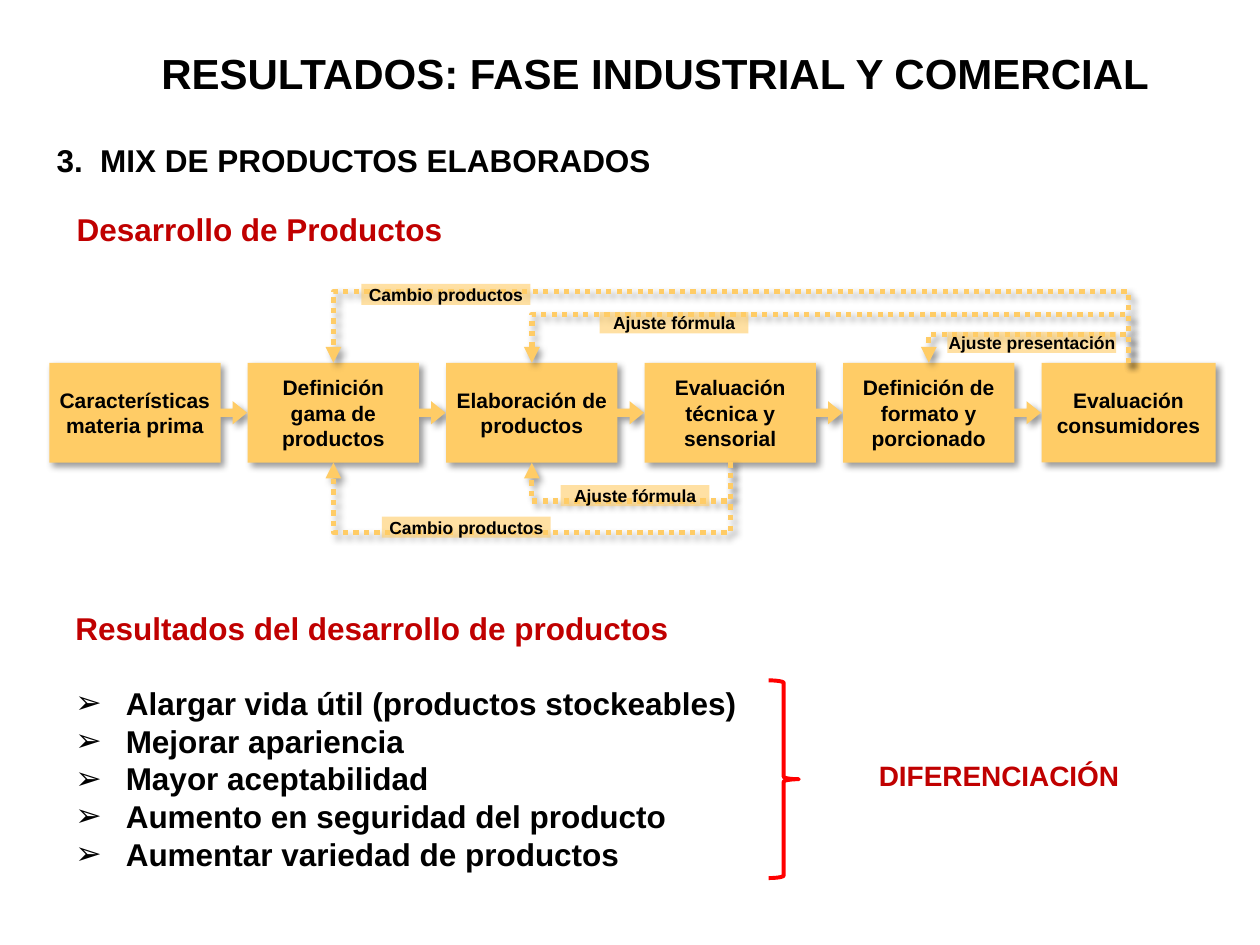
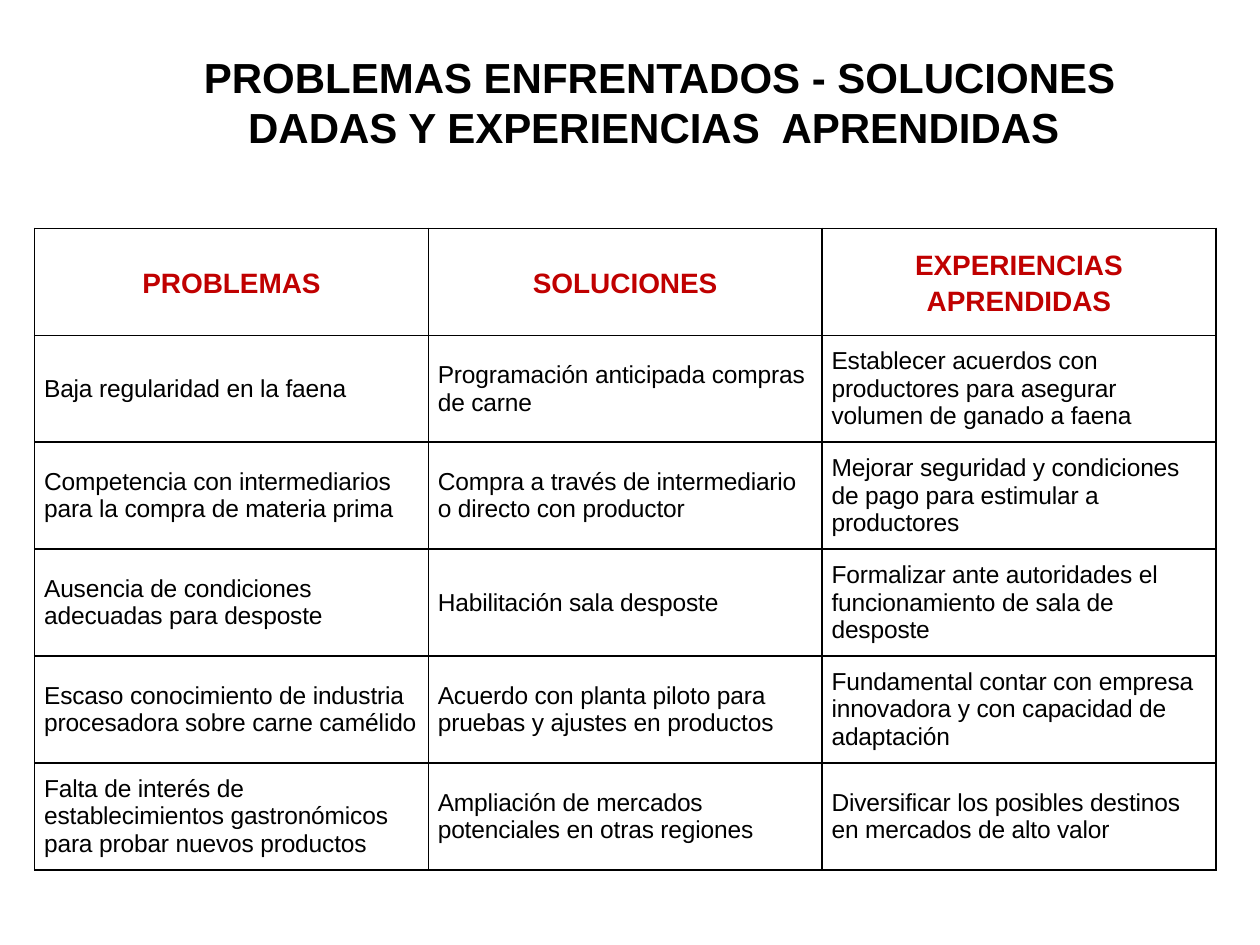
from lxml.etree import SubElement
from pptx import Presentation
from pptx.dml.color import RGBColor
from pptx.enum.dml import MSO_LINE
from pptx.enum.shapes import MSO_CONNECTOR, MSO_SHAPE
from pptx.enum.text import MSO_ANCHOR, PP_ALIGN
from pptx.oxml import parse_xml
from pptx.oxml.ns import nsdecls, qn
from pptx.util import Pt

BLACK = RGBColor(0x00, 0x00, 0x00)
DARK_RED = RGBColor(0xC0, 0x00, 0x00)
RED = RGBColor(0xFF, 0x00, 0x00)
AMBER = RGBColor(0xFF, 0xCC, 0x66)
FONT = "Arial"
SHADOW = (
    f'<a:effectLst {nsdecls("a")}><a:outerShdw blurRad="50800" dist="38100" dir="2700000" algn="tl">'
    '<a:srgbClr val="000000"><a:alpha val="40000"/></a:srgbClr></a:outerShdw></a:effectLst>'
)


def write(frame, text, size=18, color=BLACK, bold=True, align=PP_ALIGN.LEFT,
          anchor=MSO_ANCHOR.TOP, margins=None, line_spacing=None, tracking=None):
    """Fill a text frame, one paragraph per line of text."""
    frame.word_wrap = True
    frame.vertical_anchor = anchor
    if margins:
        frame.margin_left = frame.margin_right = Pt(margins[0])
        frame.margin_top = frame.margin_bottom = Pt(margins[1])
    for number, line in enumerate(text.split("\n")):
        paragraph = frame.add_paragraph() if number else frame.paragraphs[0]
        paragraph.alignment = align
        if line_spacing:
            paragraph.line_spacing = line_spacing
        run = paragraph.add_run()
        run.text = line
        run.font.name = FONT
        run.font.size = Pt(size)
        run.font.bold = bold
        run.font.color.rgb = color
        if tracking:
            run.font._element.set("spc", str(tracking))


def add_text(slide, left, top, width, height, text, **text_format):
    box = slide.shapes.add_textbox(Pt(left), Pt(top), Pt(width), Pt(height))
    write(box.text_frame, text, **text_format)
    return box


presentation = Presentation()
presentation.slide_width = Pt(720)
presentation.slide_height = Pt(540)
blank = presentation.slide_layouts[6]
title_format = dict(size=24, align=PP_ALIGN.CENTER)

# Slide 1: product development process
slide = presentation.slides.add_slide(blank)
add_text(slide, 59.8, 23.8, 629.3, 36, "RESULTADOS: FASE INDUSTRIAL Y COMERCIAL", **title_format)
add_text(slide, 25.2, 77, 668.9, 29, "3.  MIX DE PRODUCTOS ELABORADOS", align=PP_ALIGN.JUSTIFY)
add_text(slide, 36.7, 116.6, 244, 29, "Desarrollo de Productos", color=DARK_RED)

STEP_LEFT, STEP_TOP, STEP_PITCH = 28.2, 207.4, 113.4
STEP_WIDTH, STEP_HEIGHT, LAST_WIDTH = 113, 56.9, 99.4
BODY_SHARE = 0.866
steps = [
    "Características materia prima", "Definición gama de productos", "Elaboración de productos",
    "Evaluación técnica y sensorial", "Definición de formato y porcionado", "Evaluación consumidores",
]
step_shapes, step_centers = [], []
for index, step in enumerate(steps):
    last = index == len(steps) - 1
    left = STEP_LEFT + index * STEP_PITCH
    width = LAST_WIDTH if last else STEP_WIDTH
    kind = MSO_SHAPE.RECTANGLE if last else MSO_SHAPE.RIGHT_ARROW_CALLOUT
    shape = slide.shapes.add_shape(kind, Pt(left), Pt(STEP_TOP), Pt(width), Pt(STEP_HEIGHT))
    if not last:
        for position, value in enumerate((0.082, 0.116, 0.144, BODY_SHARE)):
            shape.adjustments[position] = value
    shape.fill.solid()
    shape.fill.fore_color.rgb = AMBER
    shape.line.fill.background()
    shape.element.spPr.append(parse_xml(SHADOW))
    write(shape.text_frame, step, size=12, align=PP_ALIGN.CENTER,
          anchor=MSO_ANCHOR.MIDDLE, margins=(2.9, 3.6))
    step_shapes.append(shape)
    step_centers.append(left + width * (1 if last else BODY_SHARE) / 2)

# Feedback loops: source step, target step, side (0 top, 2 bottom), depth of the bend
TOP, BOTTOM = 0, 2
THICKNESS = 0.13
loops = [(3, 2, BOTTOM, 20.2), (3, 1, BOTTOM, 36.7),
         (5, 2, TOP, 25.6), (5, 4, TOP, 15), (5, 1, TOP, 37.6)]
for source, target, side, depth in loops:
    start, end = step_centers[source], step_centers[target]
    edge = STEP_TOP + (STEP_HEIGHT if side == BOTTOM else 0)
    loop = slide.shapes.add_connector(MSO_CONNECTOR.ELBOW, Pt(start), Pt(edge), Pt(end), Pt(edge))
    loop.begin_connect(step_shapes[source], side)
    loop.end_connect(step_shapes[target], side)
    # The elbow is a thin upright box turned on its side; the bend lies far outside it
    loop.left = Pt((start + end - THICKNESS) / 2)
    loop.top = Pt(edge - (start - end) / 2)
    loop.width = Pt(THICKNESS)
    loop.height = Pt(start - end)
    properties = loop.element.spPr
    frame = properties.find(qn("a:xfrm"))
    frame.rot = 90.0 if side == BOTTOM else 270.0
    frame.flipH = False
    frame.flipV = side == TOP
    guides = properties.find(qn("a:prstGeom")).find(qn("a:avLst"))
    SubElement(guides, qn("a:gd"), name="adj1", fmla=f"val {round(depth / THICKNESS * 100000)}")
    loop.line.color.rgb = AMBER
    loop.line.width = Pt(3)
    loop.line.dash_style = MSO_LINE.ROUND_DOT
    SubElement(properties.find(qn("a:ln")), qn("a:tailEnd"), type="triangle")
    properties.append(parse_xml(SHADOW))

loop_labels = [
    ("Ajuste fórmula", 320.4, 277.2, 85), ("Cambio productos", 218.2, 295.2, 96.5),
    ("Cambio productos", 206.6, 162.2, 96.5), ("Ajuste fórmula", 342.7, 178.4, 85),
    ("Ajuste presentación", 541.4, 189.6, 96.5),
]
for text, left, top, width in loop_labels:
    label = slide.shapes.add_shape(MSO_SHAPE.RECTANGLE, Pt(left), Pt(top), Pt(width), Pt(12.1))
    label.shadow.inherit = False
    label.fill.solid()
    label.fill.fore_color.rgb = AMBER
    SubElement(label.element.spPr.find(".//" + qn("a:srgbClr")), qn("a:alpha"), val="60000")
    label.line.fill.background()
    write(label.text_frame, text, size=10, align=PP_ALIGN.CENTER,
          anchor=MSO_ANCHOR.MIDDLE, margins=(0, 0))

results = add_text(
    slide, 36, 338.4, 397.4, 170,
    "Resultados del desarrollo de productos\n"
    "Alargar vida útil (productos stockeables)\nMejorar apariencia\nMayor aceptabilidad\n"
    "Aumento en seguridad del producto\nAumentar variedad de productos",
    anchor=MSO_ANCHOR.MIDDLE)
heading, *bullets = results.text_frame.paragraphs
heading.runs[0].font.color.rgb = DARK_RED
heading.space_after = Pt(21)
for paragraph in bullets:
    paragraph.alignment = PP_ALIGN.JUSTIFY
    paragraph_format = paragraph._p.get_or_add_pPr()
    paragraph_format.set("marL", str(Pt(28.8)))
    paragraph_format.set("indent", str(Pt(-28.8)))
    SubElement(paragraph_format, qn("a:buFont"), typeface=FONT)
    SubElement(paragraph_format, qn("a:buChar"), char="➢")

brace = slide.shapes.add_shape(MSO_SHAPE.RIGHT_BRACE, Pt(439.2), Pt(388.8), Pt(17.3), Pt(113))
brace.shadow.inherit = False
brace.fill.background()
brace.line.color.rgb = RED
brace.line.width = Pt(2.25)
add_text(slide, 490.3, 423.4, 161.3, 39.6, "DIFERENCIACIÓN", size=16, color=DARK_RED,
         align=PP_ALIGN.CENTER, anchor=MSO_ANCHOR.MIDDLE, margins=(0, 0))

# Slide 2: problems, solutions and lessons
slide = presentation.slides.add_slide(blank)
add_text(slide, 82.1, 25.9, 589.7, 65.5,
         "PROBLEMAS ENFRENTADOS - SOLUCIONES DADAS Y EXPERIENCIAS  APRENDIDAS ", **title_format)
rows = [
    ("PROBLEMAS", "SOLUCIONES", "EXPERIENCIAS APRENDIDAS"),
    ("Baja regularidad en la faena",
     "Programación anticipada compras de carne",
     "Establecer acuerdos con productores para asegurar volumen de ganado a faena"),
    ("Competencia con intermediarios para la compra de materia prima",
     "Compra a través de intermediario o directo con productor",
     "Mejorar seguridad y condiciones de pago para estimular a productores"),
    ("Ausencia de condiciones adecuadas para desposte",
     "Habilitación sala desposte",
     "Formalizar ante autoridades el funcionamiento de sala de desposte"),
    ("Escaso conocimiento de industria procesadora sobre carne camélido",
     "Acuerdo con planta piloto para pruebas y ajustes en productos",
     "Fundamental contar con empresa innovadora y con capacidad de adaptación"),
    ("Falta de interés de establecimientos gastronómicos para probar nuevos productos",
     "Ampliación de mercados potenciales en otras regiones",
     "Diversificar los posibles destinos en mercados de alto valor"),
]
header_format = dict(size=16, color=DARK_RED, align=PP_ALIGN.CENTER, line_spacing=1.15)
body_format = dict(size=14, bold=False, tracking=-10)
table = slide.shapes.add_table(len(rows), 3, Pt(19.8), Pt(130.5), Pt(675), Pt(366.6)).table
table.first_row = table.horz_banding = False
for row_index, row in enumerate(rows):
    for column_index, text in enumerate(row):
        cell = table.cell(row_index, column_index)
        write(cell.text_frame, text, **(body_format if row_index else header_format))
        cell.vertical_anchor = MSO_ANCHOR.MIDDLE
        cell.margin_left = cell.margin_right = Pt(5.4)
        cell.margin_top = cell.margin_bottom = Pt(0)
        cell_properties = cell._tc.get_or_add_tcPr()
        for side in ("lnL", "lnR", "lnT", "lnB"):
            border = SubElement(cell_properties, qn(f"a:{side}"), w=str(Pt(1)))
            SubElement(SubElement(border, qn("a:solidFill")), qn("a:srgbClr"), val=str(BLACK))
        cell.fill.background()

presentation.save("out.pptx")
